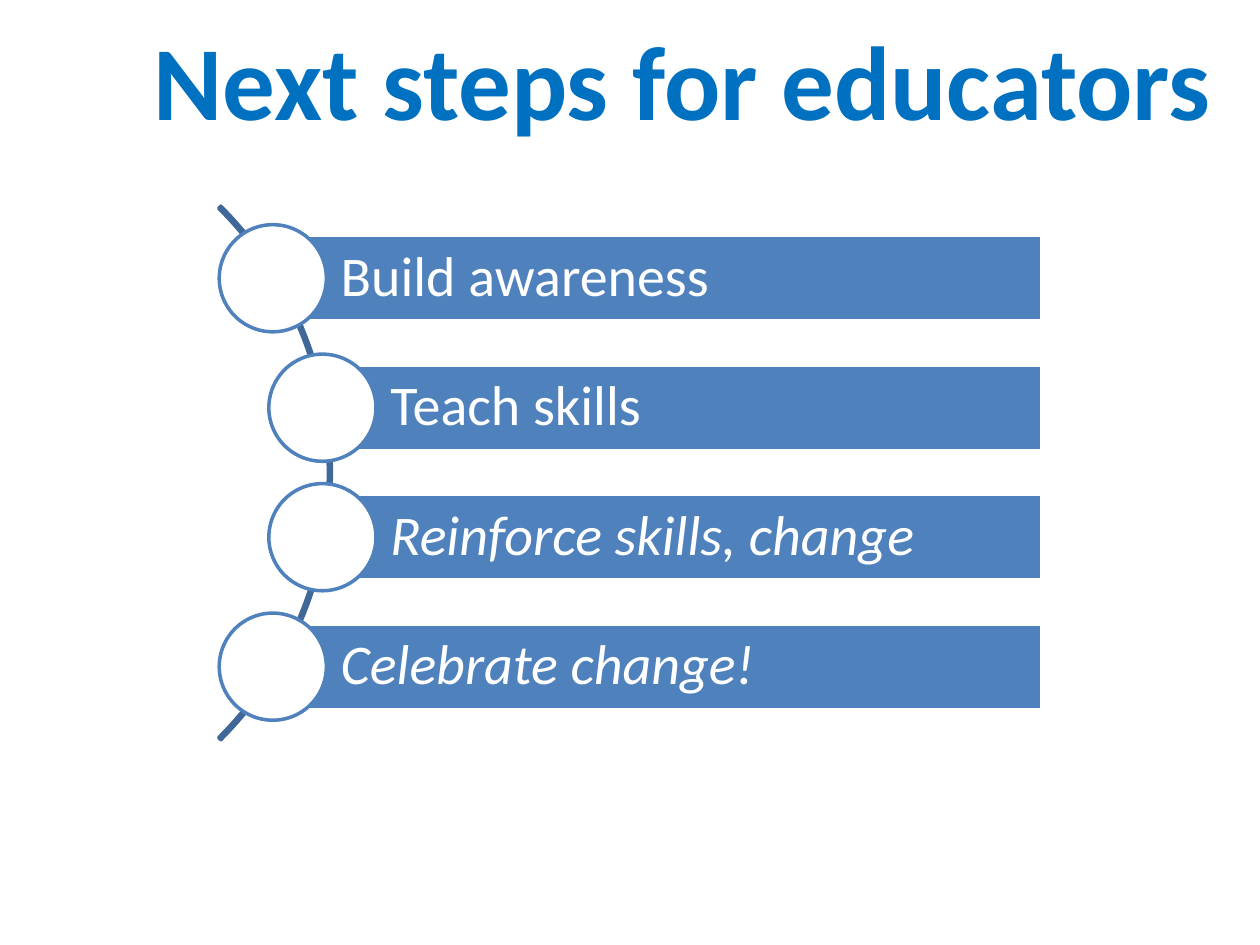
from pptx import Presentation
from pptx.dml.color import RGBColor
from pptx.enum import shapes, text
from pptx.util import Cm, Pt

BLUE, DARK_BLUE, TITLE_BLUE, WHITE = "4F81BD", "3F6797", "0070C0", "FFFFFF"
STEPS = [  # wording, left edge of the bar in cm, italic
    ("Build awareness", 5.5, False),
    ("Teach skills", 6.5, False),
    ("Reinforce skills, change", 6.5, True),
    ("Celebrate change!", 5.5, True),
]
FIRST_CENTER, PITCH = 5.61, 2.61
BAR_RIGHT, BAR_HEIGHT, CIRCLE_SIZE = 21.01, 1.73, 2.16


def color(hex_value):
    return RGBColor.from_string(hex_value)


def write(holder, words, *, size, hue, bold=False, italic=False,
          align=text.PP_ALIGN.LEFT, spacing=1.0, left_inset=0.25):
    frame = holder.text_frame
    frame.word_wrap = True
    frame.vertical_anchor = text.MSO_ANCHOR.MIDDLE
    frame.margin_left = Cm(left_inset)
    frame.margin_right = Cm(0.25)
    paragraph = frame.paragraphs[0]
    paragraph.alignment = align
    paragraph.line_spacing = spacing
    run = paragraph.add_run()
    run.text = words
    run.font.name = "Calibri"
    run.font.size = Pt(size)
    run.font.bold = bold
    run.font.italic = italic
    run.font.color.rgb = color(hue)


def add_outline(slide, preset, left, top, width, height, line, fill=None):
    shape = slide.shapes.add_shape(preset, Cm(left), Cm(top), Cm(width), Cm(height))
    shape.shadow.inherit = False
    if fill:
        shape.fill.solid()
        shape.fill.fore_color.rgb = color(fill)
    else:
        shape.fill.background()
    shape.line.color.rgb = color(line)
    shape.line.width = Pt(2)
    return shape


def add_title(slide, words):
    title = slide.shapes.add_textbox(Cm(2.33), Cm(0), Cm(22.86), Cm(3.18))
    write(title, words, size=60, hue=TITLE_BLUE, bold=True,
          align=text.PP_ALIGN.CENTER)


def add_arc(slide):
    arc = add_outline(slide, shapes.MSO_SHAPE.BLOCK_ARC,
                      -8.53, 1.93, 15.21, 15.21, DARK_BLUE)
    for index, value in enumerate((189, 27, 0.004)):
        arc.adjustments[index] = value


def add_step(slide, words, left, center, italic):
    bar = add_outline(slide, shapes.MSO_SHAPE.RECTANGLE, left,
                      center - BAR_HEIGHT / 2, BAR_RIGHT - left, BAR_HEIGHT,
                      WHITE, BLUE)
    write(bar, words, size=32, hue=WHITE, italic=italic,
          spacing=0.9, left_inset=1.37)
    add_outline(slide, shapes.MSO_SHAPE.OVAL, left - CIRCLE_SIZE / 2,
                center - CIRCLE_SIZE / 2, CIRCLE_SIZE, CIRCLE_SIZE, BLUE, WHITE)


def main():
    deck = Presentation()
    deck.slide_width, deck.slide_height = Cm(25.4), Cm(19.05)
    slide = deck.slides.add_slide(deck.slide_layouts[6])

    # Heading
    add_title(slide, "Next steps for educators")

    # Curved list: the arc lies behind the steps
    add_arc(slide)
    for row, (words, left, italic) in enumerate(STEPS):
        add_step(slide, words, left, FIRST_CENTER + row * PITCH, italic)

    deck.save("out.pptx")


if __name__ == "__main__":
    main()
